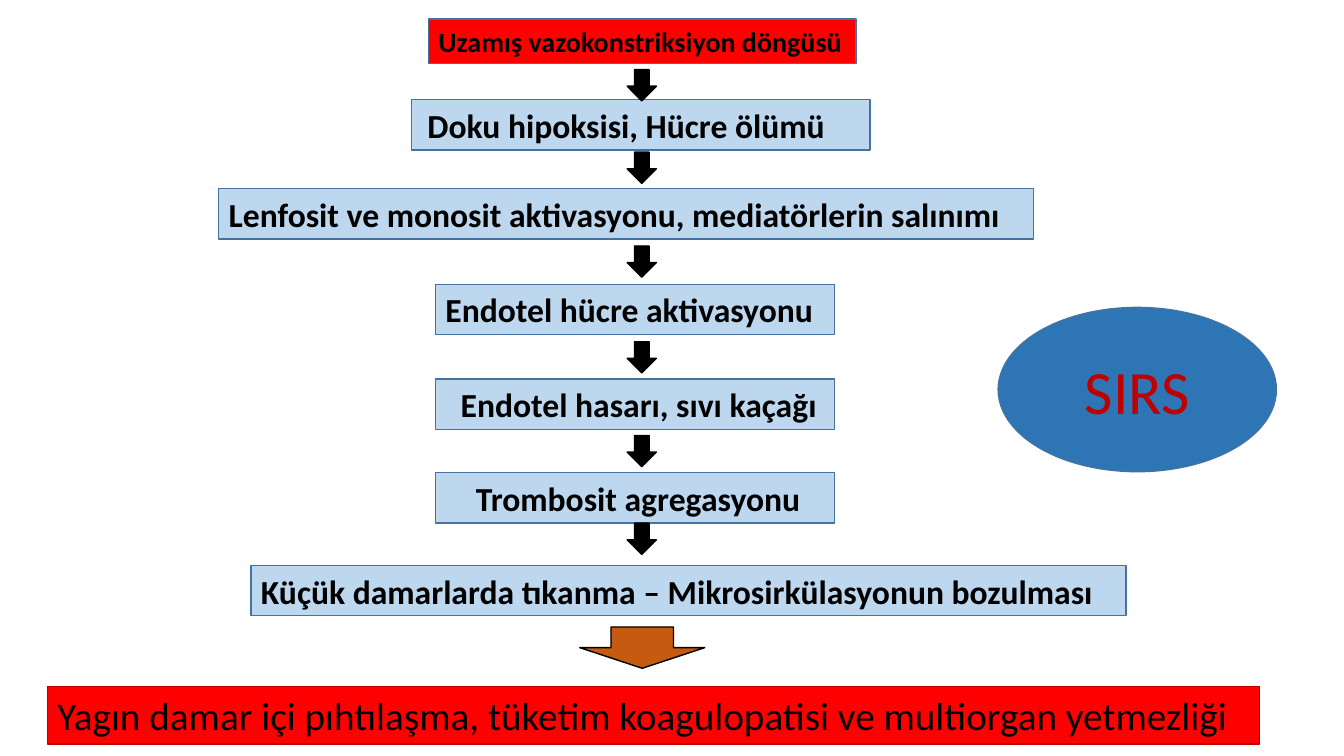
from dataclasses import dataclass

from pptx import Presentation
from pptx.dml.color import RGBColor
from pptx.enum.shapes import MSO_SHAPE as Preset
from pptx.enum.text import MSO_ANCHOR as Anchor, PP_ALIGN as Align
from pptx.util import Inches, Pt


@dataclass(frozen=True)
class Theme:
    font: str = "Calibri"
    black: str = "000000"
    red: str = "FF0000"
    dark_red: str = "C00000"
    pale_blue: str = "BDD7EE"
    blue: str = "2E75B6"
    outline: str = "43739E"
    orange: str = "C55A11"
    start_size: int = 20
    step_size: int = 24
    result_size: int = 28
    syndrome_size: int = 44


THEME = Theme()

STEPS = [
    ("Doku hipoksisi, Hücre ölümü", 4.08, 0.99, 4.55, 0.06),
    ("Lenfosit ve monosit aktivasyonu, mediatörlerin salınımı", 2.17, 1.87, 8.08, 0),
    ("Endotel hücre aktivasyonu", 4.32, 2.82, 3.96, 0),
    ("Endotel hasarı, sıvı kaçağı", 4.32, 3.76, 3.96, 0.15),
    ("Trombosit agregasyonu", 4.32, 4.69, 3.96, 0.3),
    ("Küçük damarlarda tıkanma – Mikrosirkülasyonun bozulması", 2.49, 5.61, 8.68, 0),
]
STEP_HEIGHT = 0.5
ARROW_TOPS = [0.69, 1.51, 2.44, 3.39, 4.32, 5.19]


def add_filled_shape(slide, preset, box, fill, line):
    shape = slide.shapes.add_shape(preset, *(Inches(length) for length in box))
    shape.shadow.inherit = False
    shape.fill.solid()
    shape.fill.fore_color.rgb = RGBColor.from_string(fill)
    shape.line.color.rgb = RGBColor.from_string(line)
    shape.line.width = Pt(1)
    return shape


def write_text(shape, text, *, size, color=THEME.black, bold=False,
               align=Align.LEFT, anchor=Anchor.TOP, indent=0):
    frame = shape.text_frame
    frame.word_wrap = True
    frame.vertical_anchor = anchor
    frame.margin_left = Inches(0.1 + indent)
    paragraph = frame.paragraphs[0]
    paragraph.alignment = align
    run = paragraph.add_run()
    run.text = text
    run.font.name = THEME.font
    run.font.size = Pt(size)
    run.font.bold = bold
    run.font.color.rgb = RGBColor.from_string(color)


def add_box(slide, text, box, fill, line=THEME.outline, **text_format):
    shape = add_filled_shape(slide, Preset.RECTANGLE, box, fill, line)
    write_text(shape, text, **text_format)


def add_down_arrow(slide, box, fill=THEME.black):
    add_filled_shape(slide, Preset.DOWN_ARROW, box, fill, THEME.black)


def add_syndrome(slide, text, box):
    shape = add_filled_shape(slide, Preset.OVAL, box, THEME.blue, THEME.outline)
    write_text(shape, text, size=THEME.syndrome_size, color=THEME.dark_red,
               align=Align.CENTER, anchor=Anchor.MIDDLE)


def main():
    presentation = Presentation()
    presentation.slide_width = Inches(13.33)
    presentation.slide_height = Inches(7.5)
    slide = presentation.slides.add_slide(presentation.slide_layouts[6])

    add_box(slide, "Uzamış vazokonstriksiyon döngüsü", (4.25, 0.19, 4.24, 0.44),
            THEME.red, size=THEME.start_size, bold=True)
    for arrow_top, (text, left, top, width, indent) in zip(ARROW_TOPS, STEPS):
        add_box(slide, text, (left, top, width, STEP_HEIGHT), THEME.pale_blue,
                size=THEME.step_size, bold=True, indent=indent)
        add_down_arrow(slide, (6.22, arrow_top, 0.29, 0.31))
    add_down_arrow(slide, (5.75, 6.22, 1.24, 0.41), THEME.orange)
    add_box(slide, "Yagın damar içi pıhtılaşma, tüketim koagulopatisi ve multiorgan yetmezliği",
            (0.47, 6.81, 12.02, 0.57), THEME.red, THEME.dark_red,
            size=THEME.result_size)
    add_syndrome(slide, "SIRS", (9.9, 3.05, 2.76, 1.63))

    presentation.save("out.pptx")


if __name__ == "__main__":
    main()
